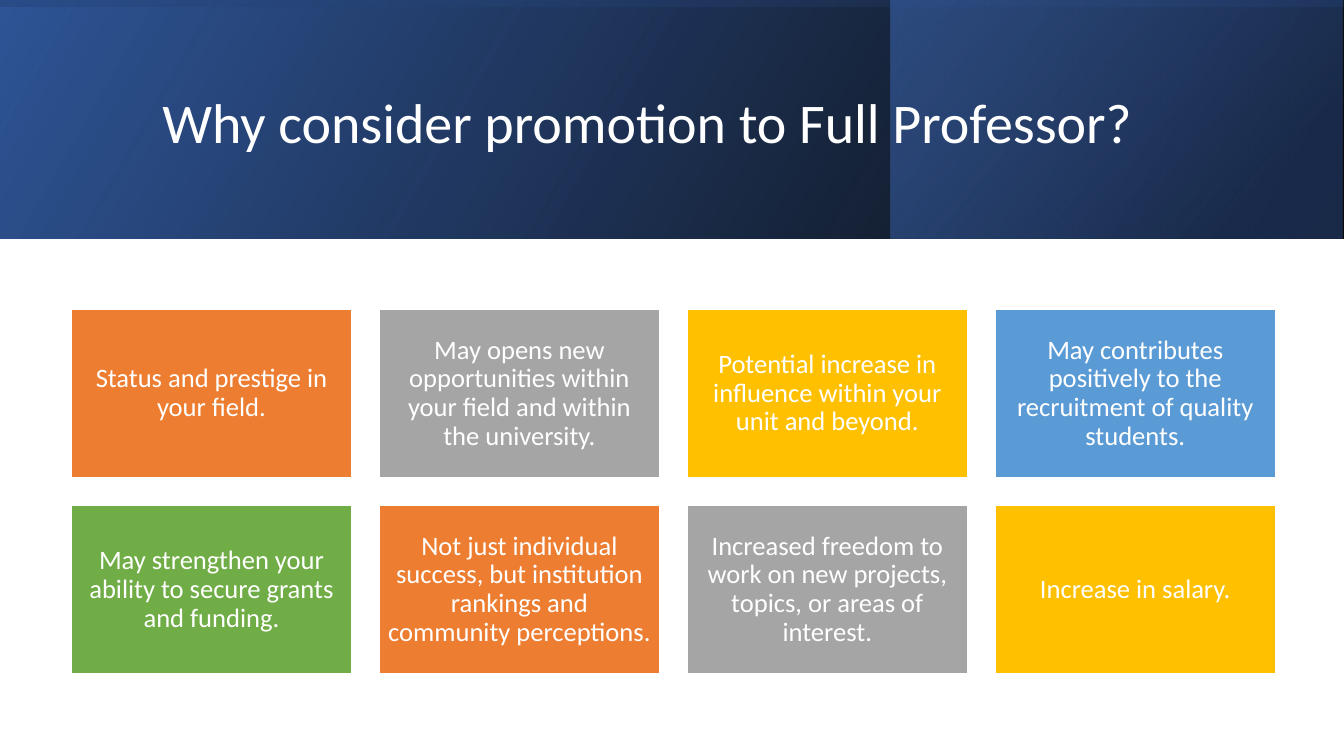
from dataclasses import dataclass

from lxml import etree
from pptx import Presentation
from pptx.dml.color import RGBColor
from pptx.enum import shapes, text
from pptx.oxml import ns
from pptx.util import Cm, Pt


@dataclass(frozen=True)
class Theme:
    font: str = "Calibri"
    title_size: int = 40
    card_size: int = 19
    white: str = "FFFFFF"
    black: str = "000000"
    navy: str = "203864"
    deep_blue: str = "2F5597"
    blue: str = "4472C4"
    card_colors: tuple = ("ED7D31", "A5A5A5", "FFC000", "5B9BD5", "70AD47")


THEME = Theme()
SLIDE_WIDTH, BANNER_HEIGHT = 33.87, 6.02


def add_rectangle(left, top, width, height):
    rectangle = slide.shapes.add_shape(
        shapes.MSO_SHAPE.RECTANGLE, Cm(left), Cm(top), Cm(width), Cm(height))
    rectangle.shadow.inherit = False
    return rectangle


def write_text(frame, wording, size, align, inset):
    frame_format = {
        "text": wording, "word_wrap": True,
        "auto_size": text.MSO_AUTO_SIZE.NONE,
        "vertical_anchor": text.MSO_ANCHOR.MIDDLE,
        "margin_left": inset, "margin_right": inset,
        "margin_top": Cm(0.2), "margin_bottom": Cm(0.2),
    }
    for name, value in frame_format.items():
        setattr(frame, name, value)
    paragraph = frame.paragraphs[0]
    paragraph.alignment = align
    paragraph.line_spacing = 0.9
    font = paragraph.runs[0].font
    for name, value in {"name": THEME.font, "size": Pt(size)}.items():
        setattr(font, name, value)
    font.color.rgb = RGBColor.from_string(THEME.white)


deck = Presentation()
deck.slide_width, deck.slide_height = Cm(SLIDE_WIDTH), Cm(19.05)
slide = deck.slides.add_slide(deck.slide_layouts[5])

# Banner: three translucent gradients, each stop as (position, colour, opacity %)
sheen_left = (SLIDE_WIDTH - BANNER_HEIGHT) / 2
banner_layers = [
    ((0, 0, SLIDE_WIDTH, BANNER_HEIGHT), 0, 330,
     [(0, THEME.black, 96), (1, THEME.deep_blue, 100)]),
    ((22.45, 0, 11.39, BANNER_HEIGHT), 0, 320,
     [(0.19, THEME.navy, 68), (1, THEME.blue, 48)]),
    ((sheen_left, -sheen_left, BANNER_HEIGHT, SLIDE_WIDTH), 270, 350,
     [(0.23, THEME.deep_blue, 16), (0.99, THEME.black, 45)]),
]
for box, rotation, clockwise_angle, stops in banner_layers:
    layer = add_rectangle(*box)
    layer.rotation = rotation
    layer.element.spPr.xfrm.set("flipH", "1")
    layer.line.fill.background()
    layer.fill.gradient()
    layer.fill.gradient_angle = 360 - clockwise_angle
    for stop, (position, color, _) in zip(layer.fill.gradient_stops, stops):
        stop.position = position
        stop.color.rgb = RGBColor.from_string(color)
    stop_colors = layer.element.spPr.iter(ns.qn("a:srgbClr"))
    for stop_color, (_, _, opacity) in zip(stop_colors, stops):
        alpha = etree.SubElement(stop_color, ns.qn("a:alpha"))
        alpha.set("val", str(opacity * 1000))

title = slide.shapes.title
title_box = {"left": 3.84, "top": 0.97, "width": 27, "height": 4.37}
for name, value in title_box.items():
    setattr(title, name, Cm(value))
write_text(title.text_frame, "Why consider promotion to Full Professor?",
           THEME.title_size, text.PP_ALIGN.LEFT, Cm(0.25))
title.element.getparent().append(title.element)  # bring in front of the banner

# Reasons: a grid of four columns, colours taken in turn
reasons = [
    "Status and prestige in your field.",
    "May opens new opportunities within your field and within the university.",
    "Potential increase in influence within your unit and beyond.",
    "May contributes positively to the recruitment of quality students.",
    "May strengthen your ability to secure grants and funding.",
    "Not just individual success, but institution rankings and community perceptions. ",
    "Increased freedom to work on new projects, topics, or areas of interest.",
    "Increase in salary.",
]
COLUMNS, GRID_LEFT, GRID_TOP = 4, 1.8, 7.8
CARD_WIDTH, CARD_HEIGHT, GAP = 7.06, 4.24, 0.7
for index, reason in enumerate(reasons):
    row, column = divmod(index, COLUMNS)
    card = add_rectangle(GRID_LEFT + column * (CARD_WIDTH + GAP),
                         GRID_TOP + row * (CARD_HEIGHT + GAP),
                         CARD_WIDTH, CARD_HEIGHT)
    card.fill.solid()
    card.fill.fore_color.rgb = RGBColor.from_string(
        THEME.card_colors[index % len(THEME.card_colors)])
    card.line.color.rgb = RGBColor.from_string(THEME.white)
    card.line.width = Pt(1)
    write_text(card.text_frame, reason, THEME.card_size,
               text.PP_ALIGN.CENTER, Cm(0.2))

deck.save("out.pptx")
